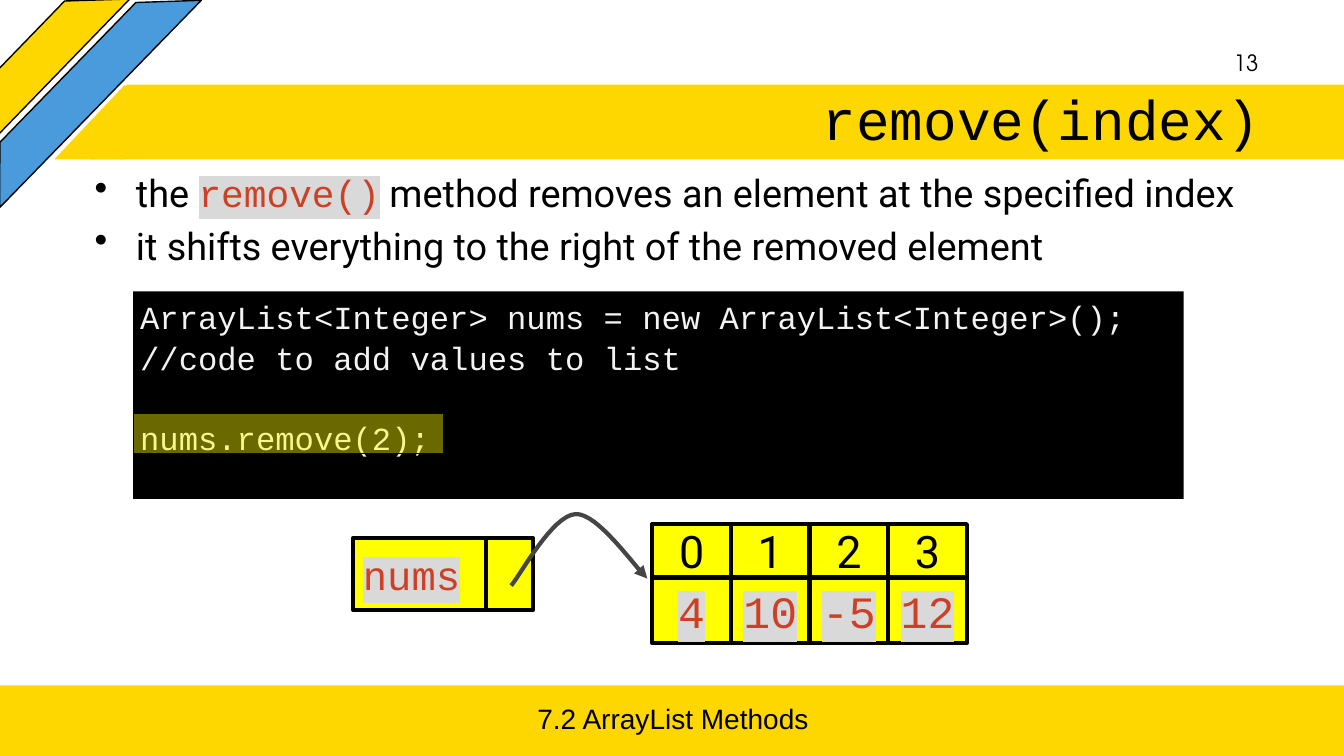
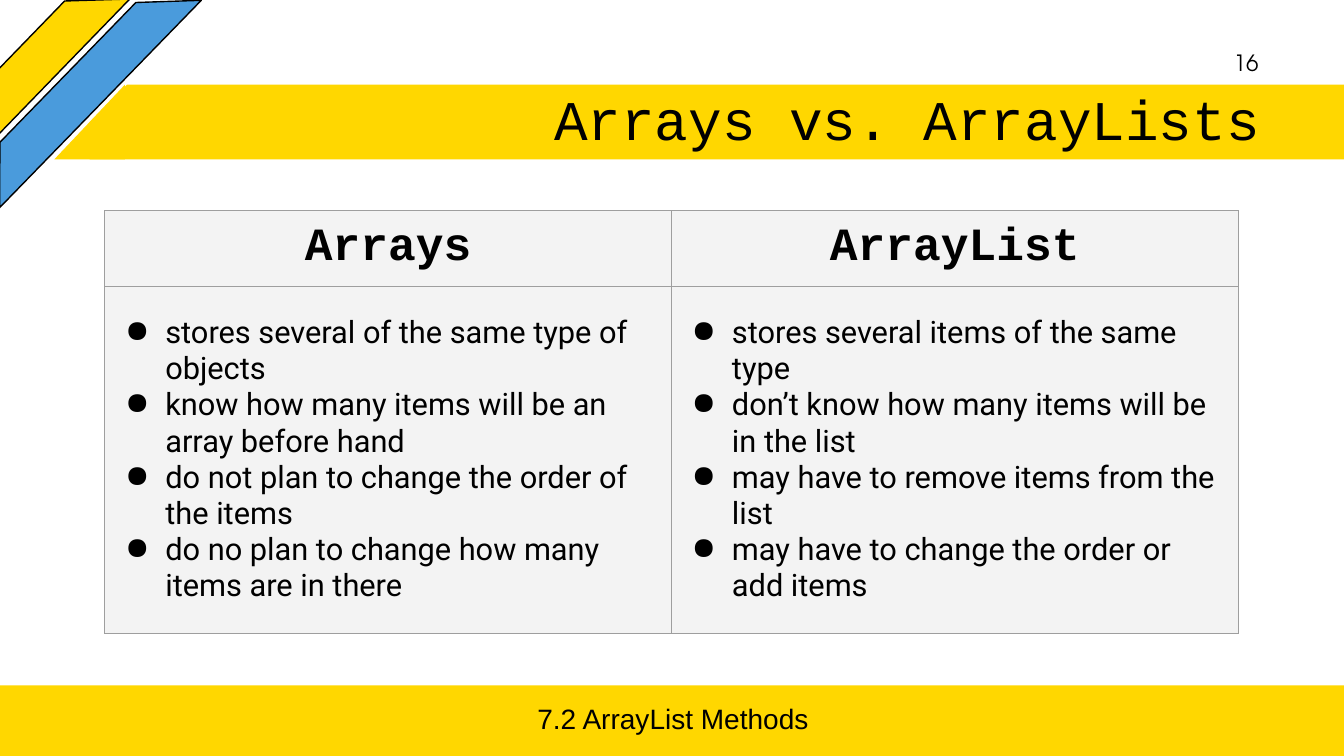
"""Build two slides on ArrayList methods."""
from lxml import etree
from pptx import Presentation
from pptx.dml.color import RGBColor
from pptx.enum.shapes import MSO_SHAPE
from pptx.enum.text import MSO_ANCHOR, MSO_AUTO_SIZE, PP_ALIGN
from pptx.oxml.ns import qn
from pptx.util import Inches, Pt

RECT, TRAP = MSO_SHAPE.RECTANGLE, MSO_SHAPE.TRAPEZOID
SNIP, WEDGE = MSO_SHAPE.SNIP_1_RECTANGLE, MSO_SHAPE.RIGHT_TRIANGLE
MIDDLE, TOP = MSO_ANCHOR.MIDDLE, MSO_ANCHOR.TOP
LEFT, CENTER, RIGHT = PP_ALIGN.LEFT, PP_ALIGN.CENTER, PP_ALIGN.RIGHT
FIXED = MSO_AUTO_SIZE.NONE
GOLD, BLUE, BLACK, YELLOW = "FFD700", "4A9BDC", "000000", "FFFF00"
RED, GRAY, PALE, RULE, DARK = "CC4125", "D9D9D9", "F3F3F3", "9E9E9E", "454545"
MONO, SANS = "Courier New", "Roboto"
rgb = RGBColor.from_string


def box(slide, kind, at, fill=None, line=None, width=3, pad=(0.1, 0.05), anchor=MIDDLE):
    """Add a shape, or a text box when kind is None."""
    at = [Inches(n) for n in at]
    if kind is None:
        shape = slide.shapes.add_textbox(*at)
    else:
        shape = slide.shapes.add_shape(kind, *at)
        shape.shadow.inherit = False
        shape.fill.solid()
        shape.fill.fore_color.rgb = rgb(fill)
        if line:
            shape.line.color.rgb = rgb(line)
            shape.line.width = Pt(width)
        else:
            shape.line.fill.background()
    frame = shape.text_frame
    frame.word_wrap = True
    frame.vertical_anchor = anchor
    frame.margin_left = frame.margin_right = Inches(pad[0])
    frame.margin_top = frame.margin_bottom = Inches(pad[1])
    return shape


def say(para, text, face, size, align=LEFT, hue=BLACK, dot=None, indent=0.4):
    """Fill a paragraph; text between backticks is marked as code."""
    para.alignment = align
    if dot:
        props = para._p.get_or_add_pPr()
        props.set("marL", str(Inches(0.5)))
        props.set("indent", str(-Inches(indent)))
        etree.SubElement(props, qn("a:buChar"), char=dot)
    para.font.name = face
    para.font.size = Pt(size)
    para.font.color.rgb = rgb(hue)
    for i, bit in enumerate(text.split("`")):
        if not bit:
            continue
        run = para.add_run()
        run.text = bit
        if i % 2:
            run.font.name = MONO
            run.font.color.rgb = rgb(RED)
            mark = etree.Element(qn("a:highlight"))
            etree.SubElement(mark, qn("a:srgbClr"), val=GRAY)
            run._r.rPr.find(qn("a:solidFill")).addnext(mark)


deck = Presentation()
deck.slide_width, deck.slide_height = Inches(13.33), Inches(7.5)
layout = deck.slide_layouts[5]
for holder in list(layout.placeholders):
    if holder.placeholder_format.idx:
        holder.element.getparent().remove(holder.element)
first, second = [deck.slides.add_slide(layout) for _ in range(2)]

floor = box(first, RECT, (0, 6.8, 13.33, 0.7), GOLD)
stripes = []
for at, turn, slant, hue in [
    ((-0.46, 0.28, 1.87, 0.45), 314.1, 1.03, GOLD),
    ((-0.6, 0.65, 2.87, 0.45), 314.2, 1.04, BLUE),
]:
    stripe = box(first, TRAP, at, hue, BLACK, 1)
    stripe.rotation = turn
    stripe.adjustments[0] = slant
    stripes.append(stripe)
foot = box(first, None, (0.22, 6.93, 12.91, 0.4))
say(foot.text_frame.paragraphs[0], "7.2 ArrayList Methods", "Arial", 20, CENTER)
band = box(first, SNIP, (0.89, 0.84, 12.44, 0.74), GOLD)
band.adjustments[0] = 0.5
edge = box(first, WEDGE, (0.54, 0.84, 0.7, 0.74), GOLD)
for shape in (band, edge):
    shape.element.spPr.xfrm.set("flipH", "1")
for shape in (floor, *stripes, foot, band, edge):
    layout.shapes.element.append(shape.element)

for slide, name, page in [
    (first, "remove(index)", "13"),
    (second, "Arrays vs. ArrayLists", "16"),
]:
    title = slide.shapes.title
    title.left, title.top = Inches(1.39), Inches(0.84)
    title.width, title.height = Inches(11.2), Inches(0.74)
    title.text_frame.auto_size = FIXED
    title.text_frame.vertical_anchor = MIDDLE
    para = title.text_frame.paragraphs[0]
    para.line_spacing = 0.9
    say(para, name, MONO, 40, RIGHT)
    num = box(slide, None, (9.58, 0.42, 3, 0.4))
    say(num.text_frame.paragraphs[0], page, "TeX Gyre Adventor", 16, RIGHT)

body = box(first, None, (0.75, 1.57, 11.83, 1.32), anchor=TOP).text_frame
for i, text in enumerate([
    "the `remove()` method removes an element at the specified index",
    "it shifts everything to the right of the removed element",
]):
    para = body.add_paragraph() if i else body.paragraphs[0]
    para.line_spacing = 1.15
    say(para, text, SANS, 27, dot="•", indent=0.41)

code = box(first, RECT, (1.32, 2.89, 10.42, 2.06), BLACK, pad=(0.07, 0.04), anchor=TOP).text_frame
for i, (text, gap) in enumerate([
    ("ArrayList<Integer> nums = new ArrayList<Integer>();", 0),
    ("//code to add values to list", 0),
    ("nums.remove(2);", 27.6),
]):
    para = code.add_paragraph() if i else code.paragraphs[0]
    para.line_spacing = 1.06
    para.space_before = Pt(gap)
    say(para, text, MONO, 23, hue=PALE)

cells = [
    ((3.5, 5.34, 1.35, 0.71), "`nums`", 29, LEFT),
    ((4.82, 5.34, 0.47, 0.71), "", 29, LEFT),
]
for i, value in enumerate(["4", "10", "-5", "12"]):
    x = 6.47 + 0.78 * i
    cells.append(((x, 5.2, 0.78, 0.53), str(i), 32, CENTER))
    cells.append(((x, 5.73, 0.78, 0.65), f"`{value}`", 32, CENTER))
for at, text, size, align in cells:
    cell = box(first, RECT, at, YELLOW, BLACK, pad=(0.1, 0.1))
    if text:
        say(cell.text_frame.paragraphs[0], text, SANS, size, align)

curves = [
    [(5.07, 5.81), (5.17, 5.69), (5.48, 5.11), (5.71, 5.1)],
    [(5.71, 5.1), (5.93, 5.09), (6.3, 5.63), (6.42, 5.74)],
]
steps = 16
points = []
for a, b, c, d in curves:
    for i in range(1, steps + 1):
        t = i / steps
        u = 1 - t
        points.append([
            Inches(u**3 * a[k] + 3 * u * u * t * b[k] + 3 * u * t * t * c[k] + t**3 * d[k])
            for k in range(2)
        ])
path = first.shapes.build_freeform(*[Inches(n) for n in curves[0][0]])
path.add_line_segments(points, close=False)
arrow = path.convert_to_shape()
arrow.shadow.inherit = False
arrow.fill.background()
arrow.line.color.rgb = rgb(DARK)
arrow.line.width = Pt(3)
etree.SubElement(arrow.element.spPr.find(qn("a:ln")), qn("a:tailEnd"), type="triangle")

glow = box(first, RECT, (1.32, 4.1, 3.08, 0.4), YELLOW, BLACK, 0.75)
tint = glow.element.spPr.find(qn("a:solidFill")).find(qn("a:srgbClr"))
etree.SubElement(tint, qn("a:alpha"), val="41000")

heads = ["Arrays", "ArrayList"]
lists = [
    [
        "stores several of the same type of objects",
        "know how many items will be an array before hand",
        "do not plan to change the order of the items",
        "do no plan to change how many items are in there",
    ],
    [
        "stores several items of the same type",
        "don’t know how many items will be in the list",
        "may have to remove items from the list",
        "may have to change the order or add items",
    ],
]
at = [Inches(n) for n in (1.04, 2.09, 11.24, 4.17)]
table = second.shapes.add_table(2, 2, *at).table
table.first_row = table.horz_banding = False
for row, height in zip(table.rows, (0.73, 3.44)):
    row.height = Inches(height)
for col in range(2):
    for row, texts in enumerate([[heads[col]], lists[col]]):
        cell = table.cell(row, col)
        cell.vertical_anchor = MIDDLE
        cell.margin_left = cell.margin_right = Inches(0.1)
        cell.margin_top = cell.margin_bottom = Inches(0.1)
        for side in ("a:lnL", "a:lnR", "a:lnT", "a:lnB"):
            line = etree.SubElement(cell._tc.get_or_add_tcPr(), qn(side), w=str(Pt(0.75)))
            fill = etree.SubElement(line, qn("a:solidFill"))
            etree.SubElement(fill, qn("a:srgbClr"), val=RULE)
        cell.fill.solid()
        cell.fill.fore_color.rgb = rgb(PALE)
        frame = cell.text_frame
        for i, text in enumerate(texts):
            para = frame.add_paragraph() if i else frame.paragraphs[0]
            if row:
                say(para, text, SANS, 22, dot="●")
            else:
                say(para, text, MONO, 33, CENTER)
                para.font.bold = True

deck.save("out.pptx")
